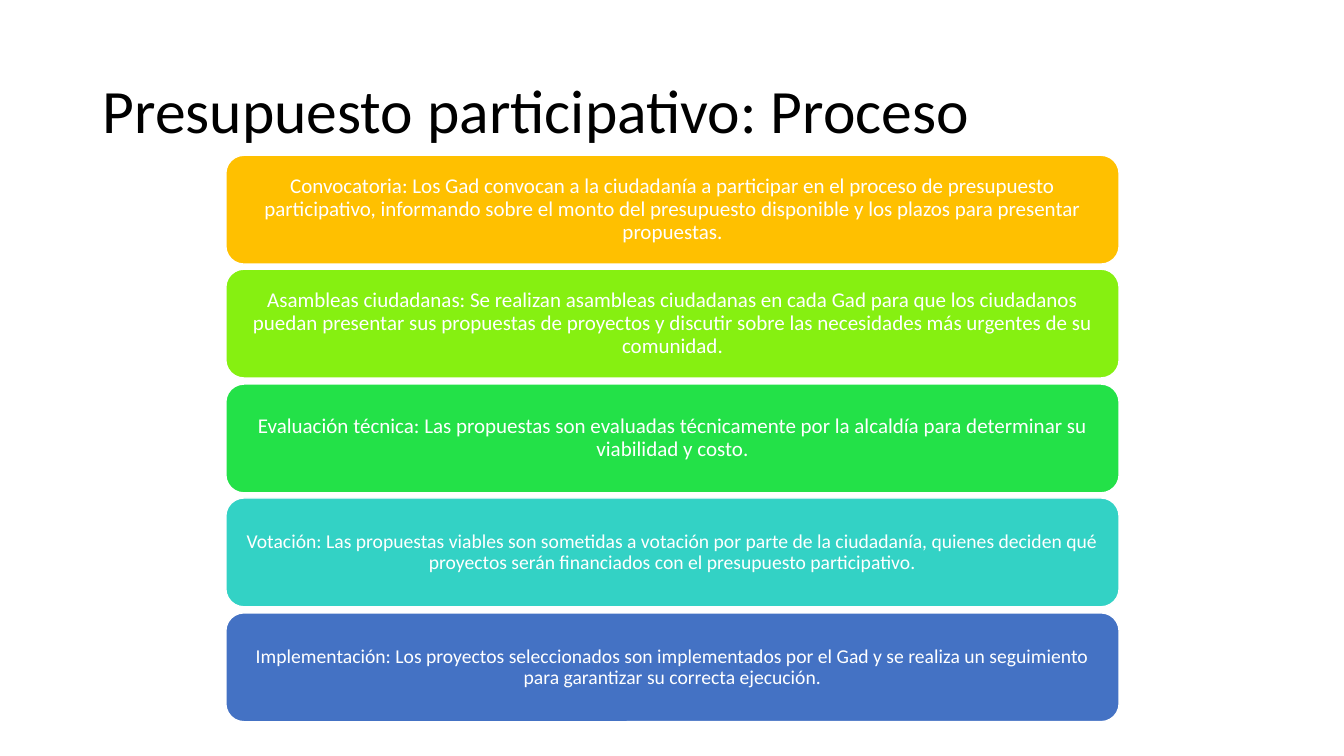
from dataclasses import dataclass

from pptx import Presentation
from pptx.dml.color import RGBColor
from pptx.enum.shapes import MSO_SHAPE
from pptx.enum.text import MSO_ANCHOR, PP_ALIGN
from pptx.util import Pt

EMU_PER_PX = 9144  # 100 px to the inch


@dataclass(frozen=True)
class Theme:
    font: str = "Calibri"
    title_size: int = 44
    title_color: str = "000000"
    step_color: str = "FFFFFF"
    outline: str = "FFFFFF"


theme = Theme()

STEPS = [
    ("FFC000", 15, "Convocatoria: Los Gad convocan a la ciudadanía a participar en el proceso de "
                   "presupuesto participativo, informando sobre el monto del presupuesto disponible "
                   "y los plazos para presentar propuestas."),
    ("86F011", 15, "Asambleas ciudadanas: Se realizan asambleas ciudadanas en cada Gad para que los "
                   "ciudadanos puedan presentar sus propuestas de proyectos y discutir sobre las "
                   "necesidades más urgentes de su comunidad."),
    ("23E148", 15, "Evaluación técnica: Las propuestas son evaluadas técnicamente por la alcaldía "
                   "para determinar su viabilidad y costo."),
    ("33D2C5", 14, "Votación: Las propuestas viables son sometidas a votación por parte de la "
                   "ciudadanía, quienes deciden qué proyectos serán financiados con el presupuesto "
                   "participativo."),
    ("4472C4", 14, "Implementación: Los proyectos seleccionados son implementados por el Gad y se "
                   "realiza un seguimiento para garantizar su correcta ejecución."),
]
STEP_LEFT, STEP_TOP, STEP_WIDTH, STEP_HEIGHT = 224, 154, 886, 108
TWO_STEPS = 227  # distance from a step to the second one below it


def px(*lengths):
    return [length * EMU_PER_PX for length in lengths]


def write(box, text, size, color, align):
    frame = box.text_frame
    frame.word_wrap = True
    frame.vertical_anchor = MSO_ANCHOR.MIDDLE
    para = frame.paragraphs[0]
    para.alignment = align
    para.line_spacing = 0.9
    span = para.add_run()
    span.text = text
    span.font.name = theme.font
    span.font.size = Pt(size)
    span.font.color.rgb = RGBColor.from_string(color)


deck = Presentation()
deck.slide_width, deck.slide_height = px(1333, 750)
page = deck.slides.add_slide(deck.slide_layouts[6])

title = page.shapes.add_textbox(*px(92, 40, 1150, 145))
write(title, "Presupuesto participativo: Proceso", theme.title_size, theme.title_color, PP_ALIGN.LEFT)

for index, (fill, size, text) in enumerate(STEPS):
    top = STEP_TOP + index * TWO_STEPS // 2
    step = page.shapes.add_shape(
        MSO_SHAPE.ROUNDED_RECTANGLE, *px(STEP_LEFT, top, STEP_WIDTH, STEP_HEIGHT))
    step.shadow.inherit = False
    step.fill.solid()
    step.fill.fore_color.rgb = RGBColor.from_string(fill)
    step.line.color.rgb = RGBColor.from_string(theme.outline)
    step.line.width = Pt(1)
    frame = step.text_frame
    frame.margin_left, frame.margin_top, frame.margin_right, frame.margin_bottom = px(6, 3, 6, 3)
    write(step, text, size, theme.step_color, PP_ALIGN.CENTER)

deck.save("out.pptx")
